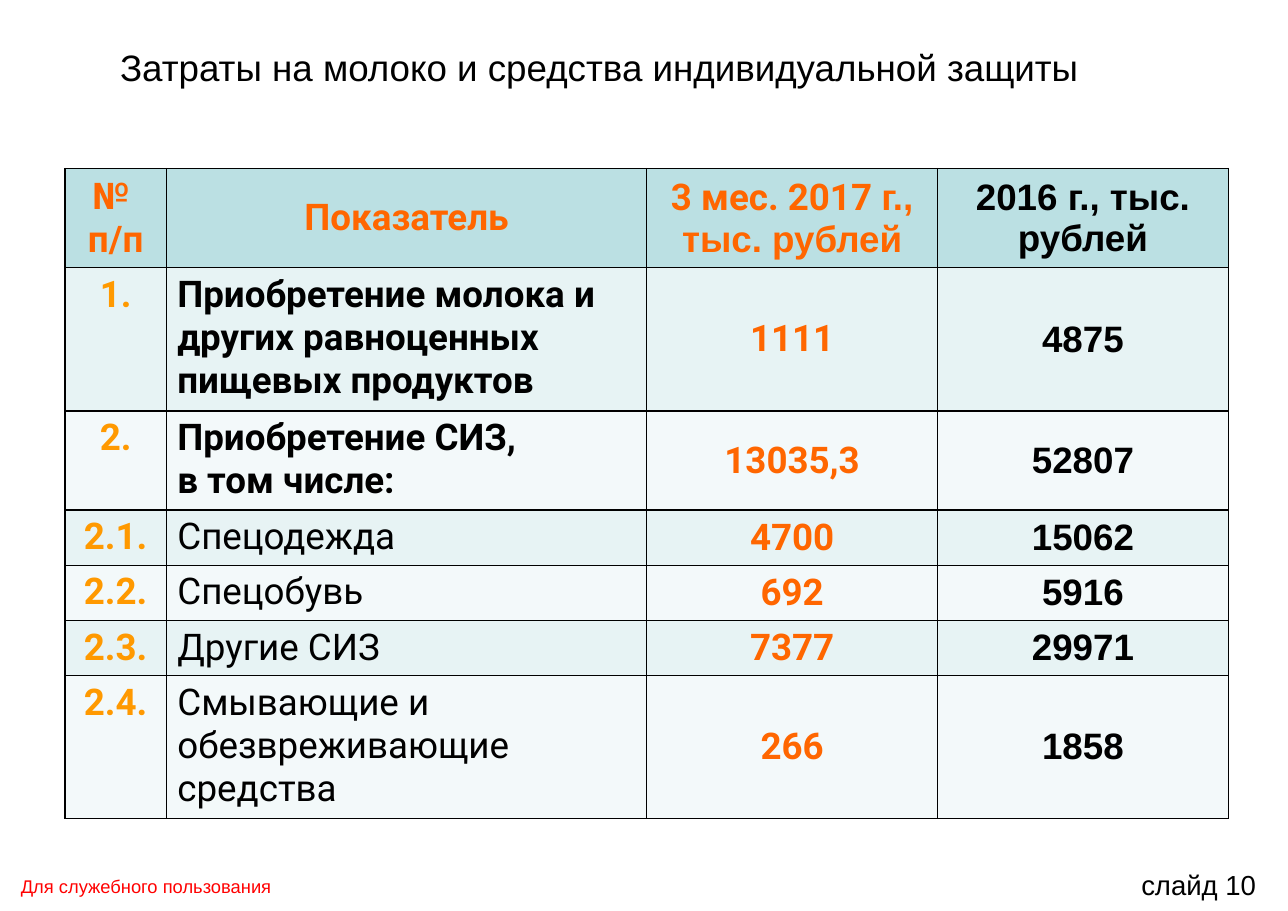
from lxml import etree
from pptx import Presentation
from pptx.dml.color import RGBColor
from pptx.enum.text import MSO_ANCHOR, PP_ALIGN
from pptx.oxml.ns import qn
from pptx.util import Inches, Pt

TOP, MIDDLE = MSO_ANCHOR.TOP, MSO_ANCHOR.MIDDLE
LEFT, CENTER = PP_ALIGN.LEFT, PP_ALIGN.CENTER

BLACK = RGBColor(0x00, 0x00, 0x00)
RED = RGBColor(0xFF, 0x00, 0x00)
ORANGE = RGBColor(0xFF, 0x66, 0x00)
AMBER = RGBColor(0xFF, 0x99, 0x00)
HEADER_FILL = RGBColor(0xBB, 0xE0, 0xE3)
BAND_FILLS = (RGBColor(0xE7, 0xF3, 0xF4), RGBColor(0xF3, 0xF9, 0xFA))

SLIDE_WIDTH, SLIDE_HEIGHT = Inches(11.69), Inches(8.27)
COLUMN_SHARES = (7.87, 37.3, 22.58, 22.58)
LINE_SHARE, PADDING_SHARE = 4.72, 1.21
ROW_LINES = (2, 3, 2, 1, 1, 1, 3)

HEADERS = (
    ("№ \nп/п", "Roboto", ORANGE),
    ("Показатель", "Roboto", ORANGE),
    ("3 мес. 2017 ", "Roboto", ORANGE),
    ("2016 г., тыс. рублей", "Arial", BLACK),
)
EXPENSES = (
    ("1.", "Приобретение молока и других равноценных пищевых продуктов", "1111", "4875"),
    ("2.", "Приобретение СИЗ,\nв том числе:", "13035,3", "52807"),
    ("2.1.", "Спецодежда", "4700", "15062"),
    ("2.2.", "Спецобувь", "692", "5916"),
    ("2.3.", "Другие СИЗ", "7377", "29971"),
    ("2.4.", "Смывающие и обезвреживающие средства", "266", "1858"),
)
COLUMN_STYLES = (
    ("Roboto", AMBER, CENTER, TOP),
    ("Roboto", BLACK, LEFT, TOP),
    ("Roboto", ORANGE, CENTER, MIDDLE),
    ("Arial", BLACK, CENTER, MIDDLE),
)


def across(percent):
    return round(SLIDE_WIDTH * percent / 100)


def down(percent):
    return round(SLIDE_HEIGHT * percent / 100)


def style_font(font, typeface, size, color, bold=False):
    font.name = typeface
    font.size = Pt(size)
    font.color.rgb = color
    font.bold = bold


def add_label(slide, box, text, size, color, anchor=TOP, insets=(0.1, 0.05)):
    left, top, width, height = box
    label = slide.shapes.add_textbox(across(left), down(top), across(width), down(height))
    frame = label.text_frame
    frame.word_wrap = True
    frame.vertical_anchor = anchor
    frame.margin_left = frame.margin_right = Inches(insets[0])
    frame.margin_top = frame.margin_bottom = Inches(insets[1])
    frame.text = text
    style_font(frame.paragraphs[0].font, "Arial", size, color)


def draw_borders(cell):
    properties = cell._tc.get_or_add_tcPr()
    for index, side in enumerate(("a:lnL", "a:lnR", "a:lnT", "a:lnB")):
        line = etree.Element(qn(side), w=str(Pt(1)))
        fill = etree.SubElement(line, qn("a:solidFill"))
        etree.SubElement(fill, qn("a:srgbClr"), val=str(BLACK))
        properties.insert(index, line)


def fill_cell(cell, text, typeface, color, alignment, anchor, fill, bold=True):
    cell.text = text
    cell.vertical_anchor = anchor
    cell.fill.solid()
    cell.fill.fore_color.rgb = fill
    draw_borders(cell)
    for paragraph in cell.text_frame.paragraphs:
        paragraph.alignment = alignment
        style_font(paragraph.font, typeface, 24, color, bold)


def add_expense_table(slide):
    row_shares = [lines * LINE_SHARE + PADDING_SHARE for lines in ROW_LINES]
    frame = slide.shapes.add_table(
        len(ROW_LINES), len(COLUMN_SHARES),
        across(5.05), down(18.5), across(sum(COLUMN_SHARES)), down(sum(row_shares)))
    table = frame.table
    for column, share in zip(table.columns, COLUMN_SHARES):
        column.width = across(share)
    for row, share in zip(table.rows, row_shares):
        row.height = down(share)

    for column, (text, typeface, color) in enumerate(HEADERS):
        fill_cell(table.cell(0, column), text, typeface, color, CENTER, MIDDLE, HEADER_FILL)
    units = table.cell(0, 2).text_frame.paragraphs[0].add_run()
    units.text = "г., тыс. рублей"
    units.font.name = "Arial"

    for row, expense in enumerate(EXPENSES, start=1):
        is_subitem = row > 2
        for column, (text, style) in enumerate(zip(expense, COLUMN_STYLES)):
            fill_cell(table.cell(row, column), text, *style,
                      fill=BAND_FILLS[(row - 1) % 2],
                      bold=not (is_subitem and column == 1))


def main():
    presentation = Presentation()
    presentation.slide_width, presentation.slide_height = SLIDE_WIDTH, SLIDE_HEIGHT
    slide = presentation.slides.add_slide(presentation.slide_layouts[6])
    add_label(slide, (0.77, 95.77, 24.38, 2.9), "Для служебного пользования",
              12, RED, MIDDLE)
    add_label(slide, (8.38, 4.23, 86.74, 6.05),
              "Затраты на молоко и средства индивидуальной защиты",
              24, BLACK, insets=(0.11, 0.06))
    add_expense_table(slide)
    add_label(slide, (87.77, 94.68, 12.15, 5.2), "слайд 10", 18, BLACK)
    presentation.save("out.pptx")


if __name__ == "__main__":
    main()
